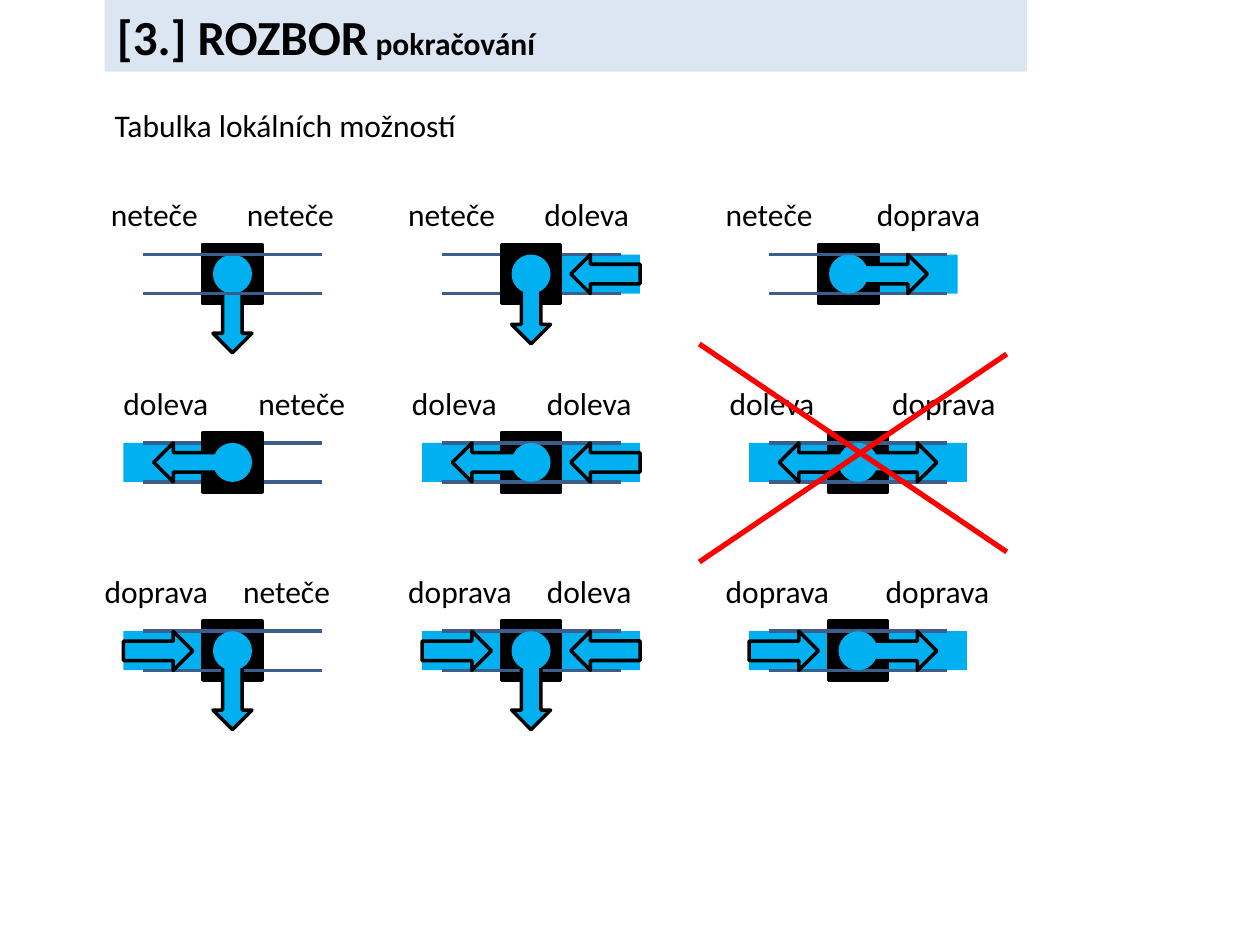
import pptx
import pptx.dml.color
import pptx.enum.shapes
import pptx.enum.text
import pptx.oxml.ns
import pptx.util
from lxml import etree
from pptx.util import Inches

COLORS = {"water": "00B0F0", "black": "000000", "rail": "3A5F8C",
          "cross": "FF0000", "banner": "DCE6F2"}
SHAPES = pptx.enum.shapes.MSO_SHAPE
FONT = "Calibri"
FLOWS = ["neteče", "doleva", "doprava"]
CENTERS_X = [1.845, 4.215, 6.81]
FIRST_Y, ROW_STEP = 2.175, 1.495
SQUARE, BORE, ARROW_LENGTH, WATER_LENGTH = 0.47, 0.31, 0.55, 0.63
SHORT_ARROW_CELL = (0, 1)
SHIFTED_CELL = (0, 2)
RAILS_BEHIND = {(0, 1), (1, 0)}
RAILS_IN_FRONT = {(0, 0)}
LABELS = [
    [(0.83, 0.05, 1.08), (3.19, 0.05, 1.08), (5.71, 0.05, 1.2)],
    [(0.98, 0, 1.07), (3.27, 0, 1.07), (5.79, 0, 1.29)],
    [(0.83, 0, 1.1), (3.19, 0.05, 1.1), (5.71, 0.05, 1.27)],
]


def rgb(name):
    return pptx.dml.color.RGBColor.from_string(COLORS[name])


def format_run(run, size, bold=False):
    run.font.name = FONT
    run.font.size = pptx.util.Pt(size)
    run.font.bold = bold
    run.font.color.rgb = rgb("black")


def add_block(slide, kind, center_x, center_y, width, height, fill,
              outlined=False, rotation=0):
    block = slide.shapes.add_shape(
        kind, Inches(center_x - width / 2), Inches(center_y - height / 2),
        Inches(width), Inches(height))
    block.shadow.inherit = False
    block.fill.solid()
    block.fill.fore_color.rgb = rgb(fill)
    if outlined:
        block.line.color.rgb = rgb("black")
        block.line.width = pptx.util.Pt(2)
    else:
        block.line.fill.background()
    block.rotation = rotation
    return block


def add_line(slide, start, end, color, width):
    line = slide.shapes.add_connector(
        pptx.enum.shapes.MSO_CONNECTOR.STRAIGHT,
        *(Inches(value) for value in start + end))
    line.line.color.rgb = rgb(color)
    line.line.width = pptx.util.Pt(width)
    etree.SubElement(line._element.spPr, pptx.oxml.ns.qn("a:effectLst"))


def add_label(slide, text, left, top, width, indent=0, tab=None):
    label = slide.shapes.add_textbox(
        Inches(left), Inches(top), Inches(width), Inches(0.3))
    frame = label.text_frame
    frame.word_wrap = True
    frame.margin_left = Inches(indent)
    frame.margin_right = frame.margin_top = frame.margin_bottom = 0
    paragraph = frame.paragraphs[0]
    paragraph.text = text
    format_run(paragraph.runs[0], 18)
    if tab:
        tabs = etree.SubElement(paragraph._p.get_or_add_pPr(),
                                pptx.oxml.ns.qn("a:tabLst"))
        etree.SubElement(tabs, pptx.oxml.ns.qn("a:tab"),
                         pos=str(Inches(tab)), algn="l")


def add_banner(slide):
    banner = add_block(slide, SHAPES.RECTANGLE, 4.49, 0.285, 7.32, 0.57, "banner")
    frame = banner.text_frame
    frame.vertical_anchor = pptx.enum.text.MSO_ANCHOR.MIDDLE
    heading = frame.paragraphs[0]
    heading.alignment = pptx.enum.text.PP_ALIGN.LEFT
    for text, size in (("[3.] ROZBOR", 28), (" pokračování", 18)):
        run = heading.add_run()
        run.text = text
        format_run(run, size, True)


def add_rails(slide, center_x, center_y):
    for y in (center_y + BORE / 2, center_y - BORE / 2):
        add_line(slide, (center_x - 0.71, y), (center_x + 0.71, y), "rail", 2)


def add_arrow(slide, center_x, center_y, rotation=0):
    add_block(slide, SHAPES.DOWN_ARROW, center_x, center_y, BORE, ARROW_LENGTH,
              "water", True, rotation)


def add_junction(slide, row, column):
    cell = (row, column)
    rails_x = CENTERS_X[column]
    x = rails_x - (0.075 if cell == SHIFTED_CELL else 0)
    y = FIRST_Y + row * ROW_STEP
    sides = [(-1, FLOWS[row], "doleva"), (1, FLOWS[column], "doprava")]
    flowing = [side for side in sides if side[1] != "neteče"]

    for sign, _, _ in flowing:
        add_block(slide, SHAPES.RECTANGLE, x + sign * (SQUARE + WATER_LENGTH) / 2,
                  y, WATER_LENGTH, BORE, "water")
    if cell in RAILS_BEHIND:
        add_rails(slide, rails_x, y)
    add_block(slide, SHAPES.RECTANGLE, x, y, SQUARE, SQUARE, "black", True)
    if cell not in RAILS_BEHIND | RAILS_IN_FRONT:
        add_rails(slide, rails_x, y)
    for sign, flow, outward in flowing:
        distance = 0.35 if flow == outward else 0.59
        add_arrow(slide, x + sign * distance, y, 90 if flow == "doleva" else 270)
    if all(flow != outward for _, flow, outward in sides):
        add_arrow(slide, x, y + (0.28 if cell == SHORT_ARROW_CELL else 0.35))
    add_block(slide, SHAPES.OVAL, x, y, BORE, BORE, "water")
    if cell in RAILS_IN_FRONT:
        add_rails(slide, rails_x, y)

    left, indent, tab = LABELS[row][column]
    add_label(slide, f"{FLOWS[row]}\t{FLOWS[column]}", left, y - 0.625,
              2.4 if column == 2 else 1.93, indent, tab)


def main():
    deck = pptx.Presentation()
    deck.slide_width, deck.slide_height = Inches(10), Inches(7.5)
    slide = deck.slides.add_slide(deck.slide_layouts[6])
    add_banner(slide)
    add_label(slide, "Tabulka lokálních možností", 0.91, 0.84, 3.78)
    for row in range(len(FLOWS)):
        for column in range(len(FLOWS)):
            add_junction(slide, row, column)
    add_line(slide, (5.55, 2.73), (7.99, 4.38), "cross", 3)
    add_line(slide, (7.99, 2.81), (5.55, 4.46), "cross", 3)
    deck.save("out.pptx")


if __name__ == "__main__":
    main()
